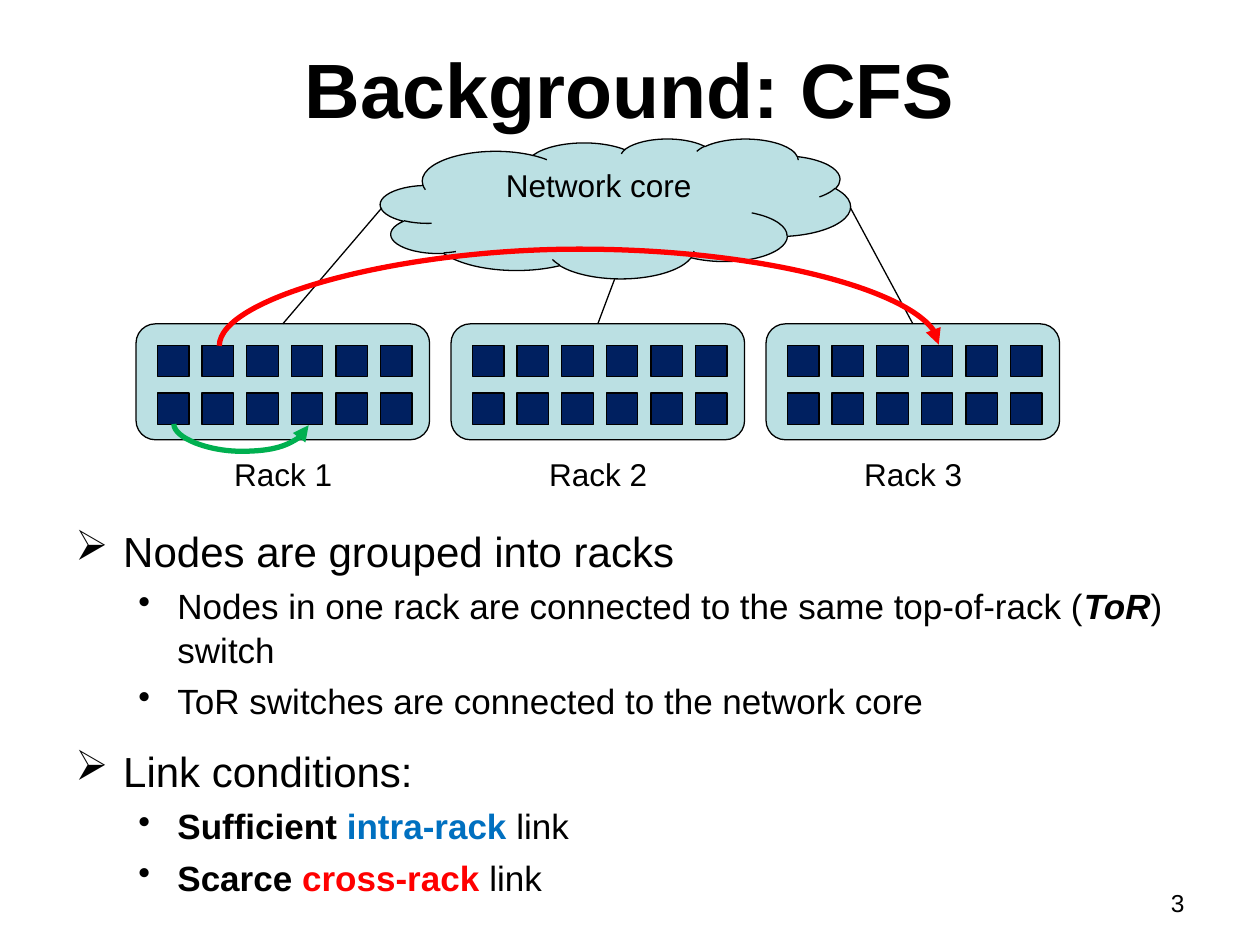
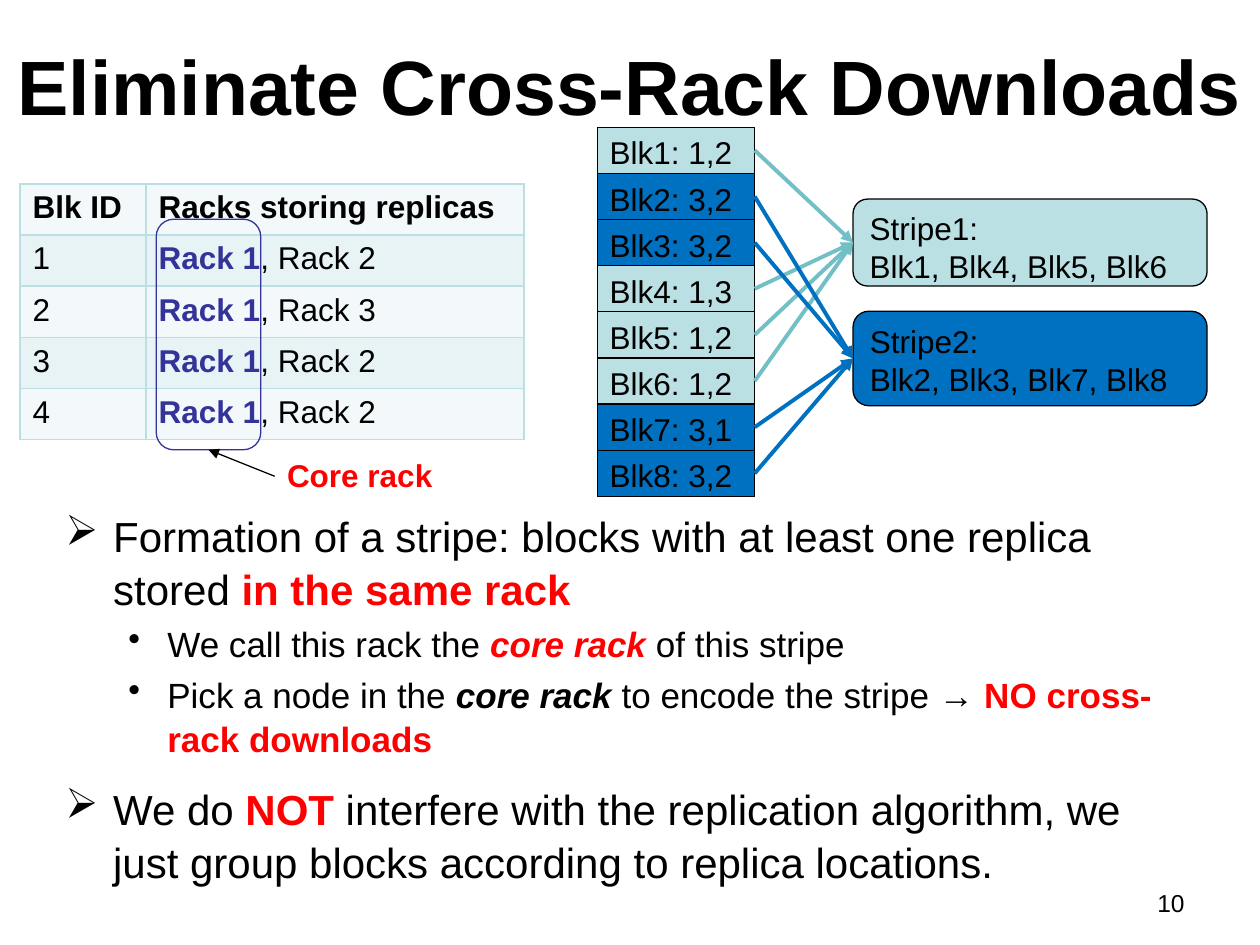
"""Build two slides on rack-based storage: the background and the core rack idea."""
from dataclasses import dataclass

from lxml import etree
from pptx import Presentation
from pptx.dml.color import RGBColor
from pptx.enum.shapes import MSO_CONNECTOR, MSO_SHAPE
from pptx.enum.text import MSO_ANCHOR, PP_ALIGN
from pptx.oxml.ns import qn
from pptx.util import Inches, Pt

STRAIGHT, CURVE = MSO_CONNECTOR.STRAIGHT, MSO_CONNECTOR.CURVE
RECTANGLE, ROUNDED, CLOUD = MSO_SHAPE.RECTANGLE, MSO_SHAPE.ROUNDED_RECTANGLE, MSO_SHAPE.CLOUD
RACK, NODE = MSO_SHAPE.FLOWCHART_ALTERNATE_PROCESS, MSO_SHAPE.FLOWCHART_PROCESS
LEFT, CENTER, RIGHT = PP_ALIGN.LEFT, PP_ALIGN.CENTER, PP_ALIGN.RIGHT
TOP, MIDDLE = MSO_ANCHOR.TOP, MSO_ANCHOR.MIDDLE
TOP_SIDE, LEFT_SIDE, BOTTOM_SIDE, RIGHT_SIDE = range(4)
CURVE_DEPTH = 0.01


@dataclass(frozen=True)
class Theme:
    """Colours, font and type sizes."""
    font: str = "Arial"
    black: str = "000000"
    red: str = "FF0000"
    green: str = "00B050"
    blue: str = "0070C0"
    navy: str = "002060"
    indigo: str = "333399"
    pale: str = "BBE0E3"
    teal: str = "72BFC5"
    row_light: str = "F3F9FA"
    row_dark: str = "E7F3F4"
    title: int = 44
    point: int = 24
    detail: int = 20
    label: int = 18
    number: int = 14
    thin: float = 0.75
    medium: float = 2.25
    thick: float = 3


THEME = Theme()
BOLD = {"bold": True}
BOLD_ITALIC = {"bold": True, "italic": True}
RED_BOLD = {"bold": True, "color": THEME.red}
RED_BOLD_ITALIC = {"bold": True, "italic": True, "color": THEME.red}
BLUE_BOLD = {"bold": True, "color": THEME.blue}
CORE_BOLD = {"bold": True, "color": THEME.indigo}

LEVELS = [
    {"bullet": "➢", "size": THEME.point, "margin": 0.38, "hang": 0.38, "before": 12},
    {"bullet": "•", "size": THEME.detail, "margin": 0.81, "hang": 0.31, "before": 4},
]


class SlideBuilder:
    """Draw themed elements on the current slide."""

    def __init__(self, deck, theme):
        self.deck, self.theme, self.page = deck, theme, None

    def new_page(self, title, number, title_place):
        """Start a slide with its title and number."""
        self.page = self.deck.slides.add_slide(self.deck.slide_layouts[6])
        self.text(title_place, [(title, BOLD)], self.theme.title, CENTER, anchor=MIDDLE)
        self.text((7.17, 7, 2.33, 0.35), number, self.theme.number, RIGHT)

    def add_spans(self, para, spans, size):
        """Add a string or (text, format) pairs to a paragraph."""
        for text, style in [(spans, {})] if isinstance(spans, str) else spans:
            span = para.add_run()
            span.text = text
            values = {"name": self.theme.font, "size": Pt(size), "bold": False, **style}
            color = values.pop("color", self.theme.black)
            for name, value in values.items():
                setattr(span.font, name, value)
            span.font.color.rgb = RGBColor.from_string(color)

    def text(self, place, spans, size, align=LEFT, anchor=TOP, wrap=True):
        """Add a one-paragraph text box."""
        box = self.page.shapes.add_textbox(*map(Inches, place))
        for name, value in {"word_wrap": wrap, "vertical_anchor": anchor}.items():
            setattr(box.text_frame, name, value)
        para = box.text_frame.paragraphs[0]
        para.alignment = align
        self.add_spans(para, spans, size)

    def bullets(self, place, items):
        """Add a bulleted body of (level, spans) items."""
        frame = self.page.shapes.add_textbox(*map(Inches, place)).text_frame
        frame.word_wrap = True
        for index, (depth, spans) in enumerate(items):
            level = LEVELS[depth]
            para = frame.add_paragraph() if index else frame.paragraphs[0]
            values = {"level": depth, "line_spacing": 1.05,
                      "space_before": Pt(level["before"] if index else 0)}
            for name, value in values.items():
                setattr(para, name, value)
            self.add_spans(para, spans, level["size"])
            properties = para._p.get_or_add_pPr()
            properties.set("marL", str(Inches(level["margin"])))
            properties.set("indent", str(-Inches(level["hang"])))
            etree.SubElement(properties, qn("a:buChar")).set("char", level["bullet"])

    def shape(self, kind, place, fill=None, line=None, lines=(), align=LEFT):
        """Add a preset shape with optional fill and text lines."""
        shape = self.page.shapes.add_shape(kind, *map(Inches, place))
        shape.shadow.inherit = False
        if fill:
            shape.fill.solid()
            shape.fill.fore_color.rgb = RGBColor.from_string(fill)
        else:
            shape.fill.background()
        self.stroke(shape.line, line or self.theme.black, self.theme.thin)
        frame = shape.text_frame
        frame.vertical_anchor = TOP
        for index, spans in enumerate(lines):
            para = frame.add_paragraph() if index else frame.paragraphs[0]
            para.alignment = align
            self.add_spans(para, spans, self.theme.label)
        return shape

    def stroke(self, line, color, width):
        """Set a line's colour and width."""
        line.color.rgb = RGBColor.from_string(color)
        line.width = Pt(width)

    def connector(self, kind, start, end, color, width, arrow):
        """Add a connector without a shadow."""
        link = self.page.shapes.add_connector(kind, *map(Inches, (*start, *end)))
        self.stroke(link.line, color, width)
        if arrow:
            tail = etree.SubElement(link.line._get_or_add_ln(), qn("a:tailEnd"))
            tail.set("type", "triangle")
        etree.SubElement(link.element.spPr, qn("a:effectLst"))
        return link

    def line(self, start=(0, 0), end=(0, 0), source=None, target=None,
             color=None, width=None, arrow=False):
        """Add a straight line, joined to (shape, side) pairs where given."""
        link = self.connector(STRAIGHT, start, end, color or self.theme.black,
                              width or self.theme.thin, arrow)
        if source:
            link.begin_connect(*source)
        if target:
            link.end_connect(*target)

    def curve(self, start_x, end_x, y, bulge, color):
        """Add a curved arrow that bulges down, or up if bulge is negative."""
        middle, half = (start_x + end_x) / 2, (end_x - start_x) / 2
        left = middle - CURVE_DEPTH / 2
        link = self.connector(CURVE, (left, y - half), (left + CURVE_DEPTH, y + half),
                              color, self.theme.thick, True)
        frame = link.element.spPr.find(qn("a:xfrm"))
        turn = {"rot": 270, "flipH": 1} if bulge > 0 else {"rot": 90, "flipH": 1, "flipV": 1}
        turn["rot"] *= 60000
        for name, value in turn.items():
            frame.set(name, str(value))
        geometry = link.element.spPr.find(qn("a:prstGeom"))
        guides = geometry.find(qn("a:avLst"))
        if guides is None:
            guides = etree.SubElement(geometry, qn("a:avLst"))
        guide = etree.SubElement(guides, qn("a:gd"))
        guide.set("name", "adj1")
        guide.set("fmla", f"val {round(abs(bulge) / CURVE_DEPTH * 100000)}")

    def table(self, place, widths, rows):
        """Add a table with alternating row fills and thin borders."""
        grid = self.page.shapes.add_table(len(rows), len(widths), *map(Inches, place)).table
        for column, width in zip(grid.columns, widths):
            column.width = Inches(width)
        for row_index, row in enumerate(rows):
            fill = self.theme.row_dark if row_index % 2 else self.theme.row_light
            for column_index, spans in enumerate(row):
                cell = grid.cell(row_index, column_index)
                cell.fill.solid()
                cell.fill.fore_color.rgb = RGBColor.from_string(fill)
                self.add_spans(cell.text_frame.paragraphs[0], spans, self.theme.label)
                self.borders(cell)

    def borders(self, cell):
        """Draw the four borders of a table cell."""
        properties = cell._tc.get_or_add_tcPr()
        for index, side in enumerate(("lnL", "lnR", "lnT", "lnB")):
            border = etree.Element(qn(f"a:{side}"), w=str(Pt(1)))
            paint = etree.SubElement(border, qn("a:solidFill"))
            etree.SubElement(paint, qn("a:srgbClr")).set("val", self.theme.pale)
            properties.insert(index, border)


def build_background(builder):
    """Draw the racks, the network core and the link conditions."""
    theme = builder.theme
    builder.new_page("Background: CFS", "3", (0.5, 0.3, 9, 0.79))
    builder.bullets((0.5, 4.1, 9, 3.25), [
        (0, "Nodes are grouped into racks"),
        (1, [("Nodes in one rack are connected to the same top-of-rack (", {}),
             ("ToR", BOLD_ITALIC), (") switch", {})]),
        (1, "ToR switches are connected to the network core"),
        (0, "Link conditions:"),
        (1, [("Sufficient ", BOLD), ("intra-rack", BLUE_BOLD), (" link", {})]),
        (1, [("Scarce", BOLD), (" cross-rack", RED_BOLD), (" link", {})]),
    ])
    racks = []
    for index in range(3):
        left = 1.08 + 2.5 * index
        racks.append(builder.shape(RACK, (left, 2.57, 2.33, 0.92), theme.pale))
        for column in range(6):
            for top in (2.74, 3.12):
                place = (left + 0.17 + 1.77 * column / 5, top, 0.25, 0.25)
                builder.shape(NODE, place, theme.navy)
        builder.text((left + 0.68, 3.56, 0.99, 0.4), f"Rack {index + 1}", theme.label, wrap=False)
    builder.shape(CLOUD, (3.02, 1.1, 3.73, 1.11), theme.pale,
                  lines=["Network core"], align=CENTER)
    for rack, start in zip(racks, [(3.03, 1.65), (4.88, 2.21), (6.75, 1.65)]):
        builder.line(start=start, target=(rack, TOP_SIDE))
    builder.curve(1.38, 2.45, 3.37, 0.22, theme.green)
    builder.curve(1.74, 7.45, 2.74, -0.78, theme.red)


def build_core_rack(builder):
    """Draw the replica table, the blocks and the stripes they form."""
    theme = builder.theme
    builder.new_page("Eliminate Cross-Rack Downloads", "10", (0, 0.3, 10, 0.74))
    builder.bullets((0.42, 3.98, 9.17, 3.49), [
        (0, [("Formation of a stripe: blocks with at least one replica stored ", {}),
             ("in the same rack", RED_BOLD)]),
        (1, [("We call this rack the ", {}), ("core rack ", RED_BOLD_ITALIC),
             ("of this stripe", {})]),
        (1, [("Pick a node in the ", {}), ("core rack ", BOLD_ITALIC),
             ("to encode the stripe → ", {}), ("NO cross-rack downloads", RED_BOLD)]),
        (0, [("We do ", {}), ("NOT", RED_BOLD),
             (" interfere with the replication algorithm, "
              "we just group blocks according to replica locations.", {})]),
    ])
    rows = [([("Blk ID", BOLD)], [("Racks storing replicas", BOLD)])]
    for block, other in enumerate((2, 3, 2, 2), 1):
        rows.append((str(block), [("Rack 1", CORE_BOLD), (f", Rack {other}", {})]))
    builder.table((0.16, 1.46, 4, 2.03), (1, 3), rows)

    stripes = [
        {"members": (1, 4, 5, 6), "top": 1.58, "height": 0.69,
         "fill": theme.pale, "link": theme.teal},
        {"members": (2, 3, 7, 8), "top": 2.47, "height": 0.75,
         "fill": theme.blue, "link": theme.blue},
    ]
    fills = {member: stripe["fill"] for stripe in stripes for member in stripe["members"]}
    blocks = {}
    block_height = 2.93 / 8
    for number, replicas in enumerate("1,2 3,2 3,2 1,3 1,2 1,2 3,1 3,2".split(), 1):
        place = (4.74, 1.01 + block_height * (number - 1), 1.25, block_height)
        blocks[number] = builder.shape(RECTANGLE, place, fills[number],
                                       lines=[f"Blk{number}: {replicas}"])
    for number, stripe in enumerate(stripes, 1):
        members = ", ".join(f"Blk{member}" for member in stripe["members"])
        box = builder.shape(ROUNDED, (6.77, stripe["top"], 2.81, stripe["height"]),
                            stripe["fill"], lines=[f"Stripe{number}:", members])
        for member in stripe["members"]:
            builder.line(source=(blocks[member], RIGHT_SIDE), target=(box, LEFT_SIDE),
                         color=stripe["link"], width=theme.medium, arrow=True)

    outline = builder.shape(ROUNDED, (1.24, 1.74, 0.83, 1.83), line=theme.indigo)
    builder.text((2.18, 3.57, 1.37, 0.4), [("Core rack", RED_BOLD)], theme.label, wrap=False)
    builder.line(start=(2.18, 3.78), target=(outline, BOTTOM_SIDE), arrow=True)


def main():
    """Build and save the deck."""
    deck = Presentation()
    deck.slide_width, deck.slide_height = Inches(10), Inches(7.5)
    builder = SlideBuilder(deck, THEME)
    build_background(builder)
    build_core_rack(builder)
    deck.save("out.pptx")


if __name__ == "__main__":
    main()
